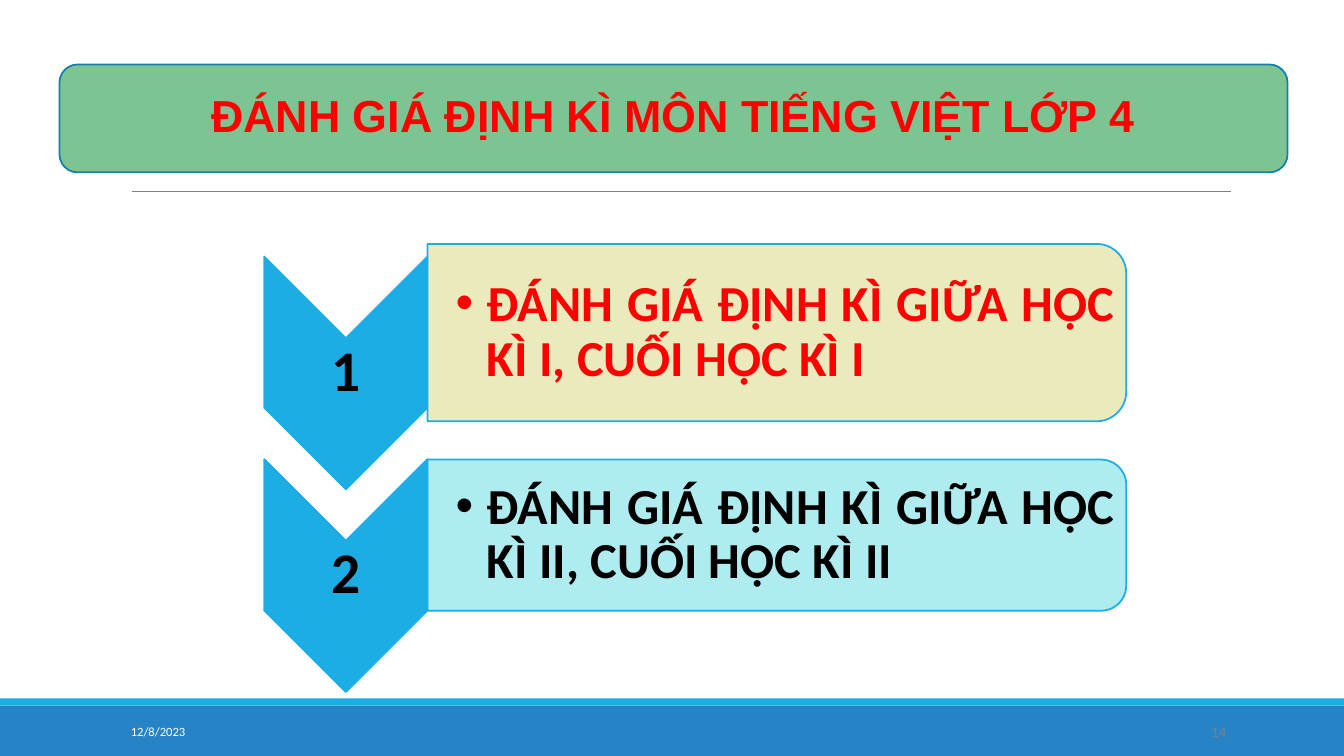
from pptx import Presentation
from pptx.dml.color import RGBColor
from pptx.enum.shapes import MSO_CONNECTOR, MSO_SHAPE
from pptx.enum.text import MSO_ANCHOR, PP_ALIGN
from pptx.oxml.ns import qn
from pptx.util import Inches, Pt
from lxml.etree import SubElement

WHITE = RGBColor(0xFF, 0xFF, 0xFF)
BLACK = RGBColor(0, 0, 0)
RED = RGBColor(0xFF, 0, 0)
GRAY = RGBColor(0x80, 0x80, 0x80)
BLUE = RGBColor(0x26, 0x83, 0xC6)
SKY = RGBColor(0x1C, 0xAD, 0xE4)
TEAL = RGBColor(0x15, 0x80, 0xA9)
GREEN = RGBColor(0x7E, 0xC4, 0x92)
CREAM = RGBColor(0xE9, 0xE8, 0xB6)
AQUA = RGBColor(0xA6, 0xEA, 0xEE)

WIDE, HIGH = 13.33, 7.5
PITCH = 2.01
STEPS = [
    ("1", "ĐÁNH GIÁ ĐỊNH KÌ GIỮA HỌC KÌ I, CUỐI HỌC KÌ I", RED, CREAM, 1.76),
    ("2", "ĐÁNH GIÁ ĐỊNH KÌ GIỮA HỌC KÌ II, CUỐI HỌC KÌ II", BLACK, AQUA, 1.5),
]


def inches(*box):
    return [Inches(v) for v in box]


def add_form(slide, kind, box, fill, line=None):
    form = slide.shapes.add_shape(kind, *inches(*box))
    form.shadow.inherit = False
    form.fill.solid()
    form.fill.fore_color.rgb = fill
    if line is None:
        form.line.fill.background()
    else:
        form.line.color.rgb = line
        form.line.width = Pt(1.25)
    return form


def add_turned(slide, kind, box, fill):
    """Add a shape turned by 90 degrees so that it fills the box."""
    x, y, w, h = box
    shift = (w - h) / 2
    form = add_form(slide, kind, (x + shift, y - shift, h, w), fill, SKY)
    form.rotation = 90
    return form


def write(frame, text, size, color, align, font="Calibri", bold=True):
    frame.word_wrap = True
    frame.vertical_anchor = MSO_ANCHOR.MIDDLE
    para = frame.paragraphs[0]
    para.alignment = align
    run = para.add_run()
    run.text = text
    run.font.name = font
    run.font.size = Pt(size)
    run.font.bold = bold
    run.font.color.rgb = color
    return para


def add_text(slide, box, text, size, color, align, left=0.03, pad=0.03, bold=True):
    frame = slide.shapes.add_textbox(*inches(*box)).text_frame
    frame.margin_left = Inches(left)
    frame.margin_right = frame.margin_top = frame.margin_bottom = Inches(pad)
    return write(frame, text, size, color, align, bold=bold)


def add_bullet(para):
    props = para._p.get_or_add_pPr()
    props.set("marL", str(Inches(0.31)))
    props.set("indent", str(-Inches(0.31)))
    SubElement(props, qn("a:buFont")).set("typeface", "Arial")
    SubElement(props, qn("a:buChar")).set("char", "•")


def add_title(slide, box):
    add_form(slide, MSO_SHAPE.ROUNDED_RECTANGLE, box, GREEN, TEAL)
    title = slide.shapes.title
    title.left, title.top, title.width, title.height = inches(*box)
    para = write(title.text_frame, "ĐÁNH GIÁ ĐỊNH KÌ MÔN TIẾNG VIỆT LỚP 4",
                 32, RED, PP_ALIGN.CENTER, "Arial")
    para.line_spacing = 0.9
    para.space_before = Pt(10)
    tree = slide.shapes._spTree
    tree.remove(title._element)
    tree.append(title._element)


def add_rule(slide, left, right, y):
    rule = slide.shapes.add_connector(
        MSO_CONNECTOR.STRAIGHT, *inches(left, y, right, y))
    rule.line.color.rgb = GRAY
    rule.line.width = Pt(0.5)
    SubElement(rule._element.spPr, qn("a:effectLst"))


def add_foot(slide, box):
    x, y, w, h = box
    add_form(slide, MSO_SHAPE.RECTANGLE, box, BLUE)
    add_form(slide, MSO_SHAPE.RECTANGLE, (x, y - 0.07, w, 0.07), SKY)
    top = y + 0.06
    add_text(slide, (x + 1.2, top, 2.7, 0.4), "12/8/2023", 9, WHITE,
             PP_ALIGN.LEFT, 0.1, 0.1, False)
    add_text(slide, (x + 10.86, top, 1.4, 0.4), "14", 10.5, GRAY,
             PP_ALIGN.RIGHT, 0.1, 0.1, False)


def add_step(slide, box, mid, step):
    """Place a chevron and its panel; the panel is centred on mid."""
    x, w = box
    mark, text, color, fill, high = step
    side, drop = 1.62, 0.4
    add_turned(slide, MSO_SHAPE.CHEVRON,
               (x, mid + drop - 2.31 / 2, side, 2.31), SKY)
    para = add_text(slide, (x, mid + drop - 0.35, side, 0.69), mark, 41,
                    BLACK, PP_ALIGN.CENTER)
    para.line_spacing = 0.9
    left, width = x + side, w - side
    panel = add_turned(slide, MSO_SHAPE.ROUND_2_SAME_RECTANGLE,
                       (left, mid - high / 2, width, high), fill)
    tint = panel.fill._xPr.find(qn("a:solidFill"))[0]
    SubElement(tint, qn("a:alpha")).set("val", "90000")
    inner = high * 0.9
    para = add_text(slide, (left, mid - inner / 2, width - 0.08, inner), text,
                    36, color, PP_ALIGN.JUSTIFY, 0.28)
    para.level = 1
    para.line_spacing = 0.9
    add_bullet(para)


def main():
    deck = Presentation()
    deck.slide_width, deck.slide_height = inches(WIDE, HIGH)
    slide = deck.slides.add_slide(deck.slide_layouts[5])
    add_foot(slide, (0, HIGH - 0.5, WIDE, 0.5))
    add_rule(slide, 1.31, 12.21, 1.9)
    add_title(slide, (0.59, 0.64, 12.18, 1.07))
    for row, step in enumerate(STEPS):
        add_step(slide, (2.62, 8.55), 3.3 + row * PITCH, step)
    deck.save("out.pptx")


if __name__ == "__main__":
    main()
